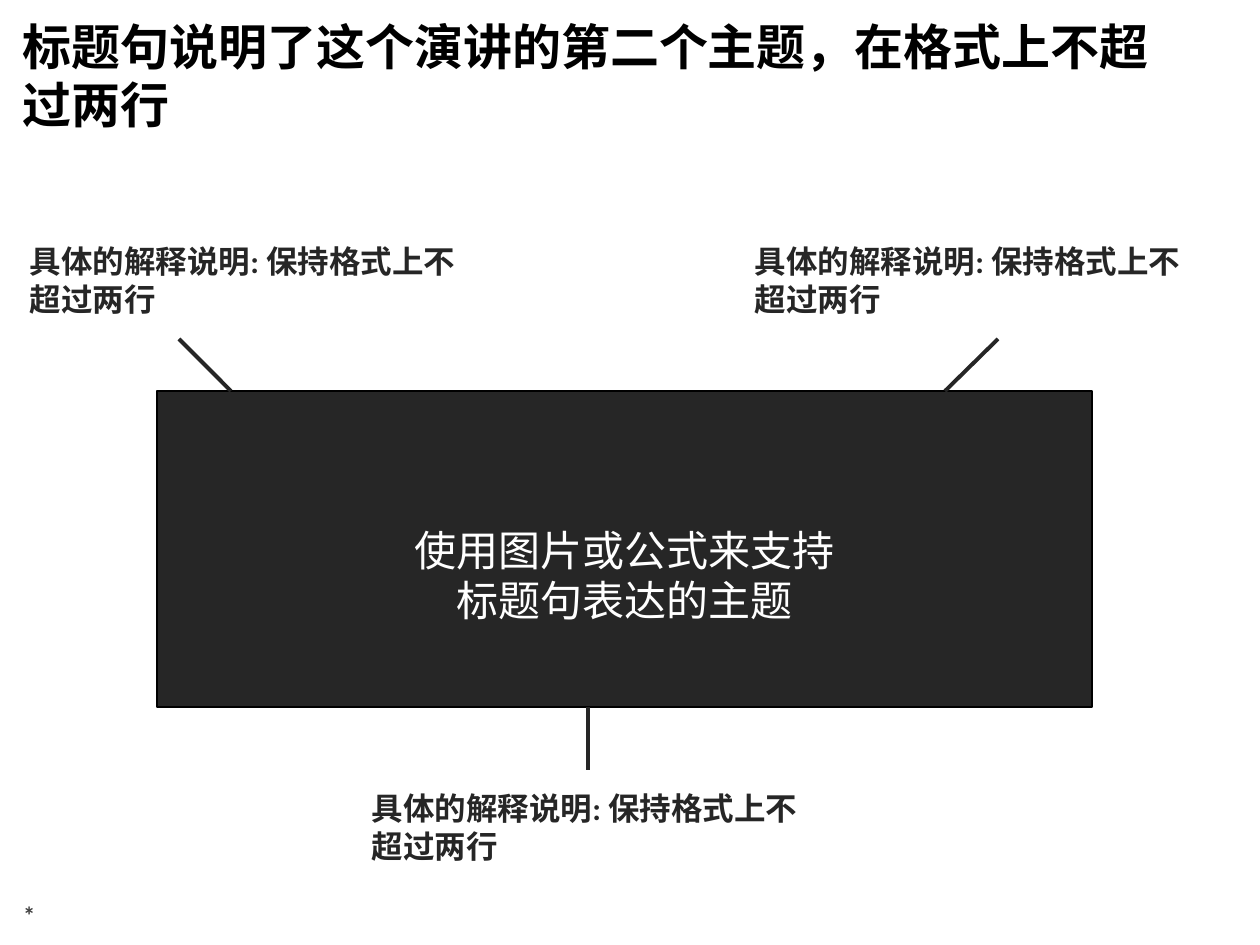
from pptx import Presentation
from pptx.dml.color import RGBColor
from pptx.enum.shapes import MSO_CONNECTOR as Connector, MSO_SHAPE as Shape
from pptx.enum.text import MSO_ANCHOR as Anchor, PP_ALIGN as Align
from pptx.oxml.ns import qn
from pptx.util import Emu, Pt
from lxml.etree import SubElement

PX_PER_INCH = 126
BLACK = RGBColor(0x00, 0x00, 0x00)
CHARCOAL = RGBColor(0x26, 0x26, 0x26)
GREY = RGBColor(0x40, 0x40, 0x40)
WHITE = RGBColor(0xFF, 0xFF, 0xFF)


def px(length):
    return Emu(round(length * 914400 / PX_PER_INCH))


class SlideBuilder:
    font = "Calibri"
    rule_width = Pt(2.25)
    border_width = Pt(0.75)

    def __init__(self, slide):
        self.slide = slide

    def set_text(self, shape, text, size, color, bold=False, align=Align.LEFT,
                 anchor=Anchor.TOP, insets=(13, 6, 13, 6)):
        frame = shape.text_frame
        frame.word_wrap = True
        frame.vertical_anchor = anchor
        (frame.margin_left, frame.margin_top,
         frame.margin_right, frame.margin_bottom) = map(px, insets)
        frame.text = text
        for paragraph in frame.paragraphs:
            paragraph.alignment = align
            for run in paragraph.runs:
                run.font.name = self.font
                run.font.size = Pt(size)
                run.font.bold = bold
                run.font.color.rgb = color

    def text(self, box, text, size, color, **style):
        label = self.slide.shapes.add_textbox(*map(px, box))
        self.set_text(label, text, size, color, bold=True, **style)

    def panel(self, box, text, size, **style):
        panel = self.slide.shapes.add_shape(Shape.RECTANGLE, *map(px, box))
        panel.shadow.inherit = False
        panel.fill.solid()
        panel.fill.fore_color.rgb = CHARCOAL
        panel.line.color.rgb = BLACK
        panel.line.width = self.border_width
        self.set_text(panel, text, size, WHITE, align=Align.CENTER,
                      anchor=Anchor.MIDDLE, **style)

    def line(self, start, end):
        line = self.slide.shapes.add_connector(
            Connector.STRAIGHT, *map(px, (*start, *end)))
        line.line.color.rgb = CHARCOAL
        line.line.width = self.rule_width
        SubElement(line._element.spPr, qn("a:effectLst"))


def main():
    deck = Presentation()
    deck.slide_width, deck.slide_height = px(1260), px(945)
    builder = SlideBuilder(deck.slides.add_slide(deck.slide_layouts[6]))

    # Headline
    builder.text((10, 10, 1196, 130),
                 "标题句说明了这个演讲的第二个主题，在格式上不超过两行", 28, BLACK)

    # Central panel, its text set below the middle by a deep top inset
    builder.panel((157, 391, 935, 316),
                  "使用图片或公式来支持\n标题句表达的主题", 24,
                  insets=(13, 57, 13, 6))

    # Explanations, each with a line to the panel
    callouts = [
        ((21, 238), (179, 339), (231, 391)),
        ((746, 238), (998, 339), (945, 391)),
        ((363, 785), (588, 707), (588, 770)),
    ]
    for corner, start, end in callouts:
        builder.line(start, end)
        builder.text((*corner, 451, 83), "具体的解释说明: 保持格式上不超过两行",
                     18, CHARCOAL, insets=(9, 4, 9, 4))

    # Footnote mark
    builder.text((10, 885, 294, 50), "*", 14, GREY, anchor=Anchor.BOTTOM)

    deck.save("out.pptx")


if __name__ == "__main__":
    main()
